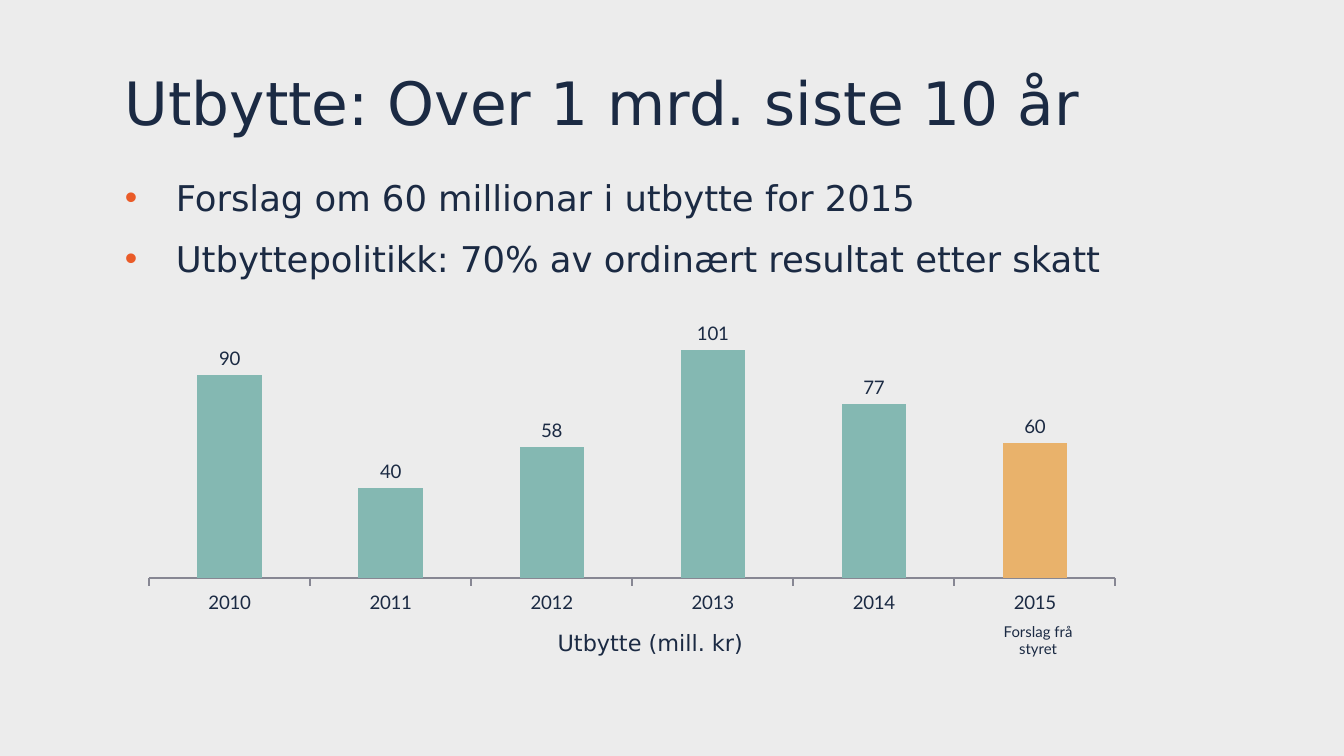
"""Build a slide on dividends, with two bullets and a column chart by year."""
from dataclasses import dataclass

import lxml.etree
import pptx
import pptx.chart.data
import pptx.dml.color
import pptx.enum.chart
import pptx.enum.text
import pptx.oxml
import pptx.oxml.ns
import pptx.util

Inches = pptx.util.Inches
Pt = pptx.util.Pt
RGB = pptx.dml.color.RGBColor.from_string
qn = pptx.oxml.ns.qn
ALIGN = pptx.enum.text.PP_ALIGN
ANCHOR = pptx.enum.text.MSO_ANCHOR


@dataclass(frozen=True)
class Theme:
    background = RGB("ECECEC")
    ink = RGB("1B2A43")
    paid = RGB("84B8B2")
    proposed = RGB("E9B26B")
    axis = RGB("878793")
    bullet = "EA5B28"
    text_font = "DejaVu Sans"
    bullet_font = "Arial"
    chart_font = "Lato"
    title_size = Pt(32)
    bullet_size = Pt(19)
    caption_size = Pt(12)
    chart_size = Pt(10)
    note_size = Pt(8)


theme = Theme()


def style_font(font, size, name):
    font.size = size
    font.name = name
    font.color.rgb = theme.ink


def add_text(box, lines, size, name, align=ALIGN.LEFT, anchor=ANCHOR.TOP):
    frame = slide.shapes.add_textbox(*map(Inches, box)).text_frame
    frame.word_wrap = True
    frame.vertical_anchor = anchor
    frame.text = "\n".join(lines)
    for paragraph in frame.paragraphs:
        paragraph.alignment = align
        style_font(paragraph.font, size, name)
    return frame


deck = pptx.Presentation()
deck.slide_width = Inches(10)
deck.slide_height = Inches(10 * 9 / 16)
slide = deck.slides.add_slide(deck.slide_layouts[6])
slide.background.fill.solid()
slide.background.fill.fore_color.rgb = theme.background

add_text((0.83, 0.34, 7.88, 0.83), ["Utbytte: Over 1 mrd. siste 10 år"],
         theme.title_size, theme.text_font, anchor=ANCHOR.MIDDLE)

points = add_text((0.83, 1.2, 7.88, 3.96),
                  ["Forslag om 60 millionar i utbytte for 2015",
                   "Utbyttepolitikk: 70% av ordinært resultat etter skatt"],
                  theme.bullet_size, theme.text_font)
for index, point in enumerate(points.paragraphs):
    point.line_spacing = 1.2
    point.space_before = Pt(4 if index else 0)
    point.space_after = Pt(1)
    properties = point._p.get_or_add_pPr()
    properties.set("marL", str(Inches(0.38)))
    properties.set("indent", str(Inches(-0.38)))
    bullet_color = lxml.etree.Element(qn("a:buClr"))
    lxml.etree.SubElement(bullet_color, qn("a:srgbClr"), val=theme.bullet)
    bullet_font = lxml.etree.Element(qn("a:buFont"), typeface=theme.bullet_font)
    bullet_char = lxml.etree.Element(qn("a:buChar"), char="•")
    for element in (bullet_color, bullet_font, bullet_char):
        properties.find(qn("a:defRPr")).addprevious(element)

add_text((3.41, 4.63, 2.86, 0.3), ["Utbytte (mill. kr)"],
         theme.caption_size, theme.text_font, ALIGN.CENTER)

dividends = pptx.chart.data.CategoryChartData()
dividends.categories = [str(year) for year in range(2010, 2016)]
dividends.add_series("Series 1", (90, 40, 58, 101, 77, 60))
chart = slide.shapes.add_chart(
    pptx.enum.chart.XL_CHART_TYPE.COLUMN_CLUSTERED,
    *map(Inches, (0.96, 2.24, 7.49, 2.37)), dividends).chart
chart.has_legend = False
chart.has_title = False
style_font(chart.font, theme.chart_size, theme.chart_font)

year_axis = chart.category_axis
year_axis.major_tick_mark = pptx.enum.chart.XL_TICK_MARK.OUTSIDE
year_axis.format.line.color.rgb = theme.axis
year_axis.format.line.width = Pt(1)
amount_axis = chart.value_axis
amount_axis.minimum_scale = 0
amount_axis.maximum_scale = 120
amount_axis.has_major_gridlines = False
amount_axis.visible = False

columns = chart.plots[0]
columns.gap_width = 150
columns.vary_by_categories = False
columns.has_data_labels = True
columns.data_labels.show_value = True
columns.data_labels.position = pptx.enum.chart.XL_LABEL_POSITION.OUTSIDE_END
style_font(columns.data_labels.font, theme.chart_size, theme.chart_font)
amounts = columns.series[0]
for fill, color in ((amounts.format.fill, theme.paid),
                    (amounts.points[5].format.fill, theme.proposed)):
    fill.solid()
    fill.fore_color.rgb = color

plot_area = chart._chartSpace.find(".//" + qn("c:plotArea"))
for old_layout in plot_area.findall(qn("c:layout")):
    plot_area.remove(old_layout)
layout = lxml.etree.Element(qn("c:layout"))
plot_area.insert(0, layout)
manual = lxml.etree.SubElement(layout, qn("c:manualLayout"))
for tag, value in (("layoutTarget", "inner"), ("xMode", "edge"), ("yMode", "edge"),
                   ("x", "0.02"), ("y", "0.02"), ("w", "0.96"), ("h", "0.85")):
    lxml.etree.SubElement(manual, qn("c:" + tag), val=value)

add_text((7.31, 4.58, 0.83, 0.37), ["Forslag frå styret"],
         theme.note_size, theme.chart_font, ALIGN.CENTER)

deck.save("out.pptx")
